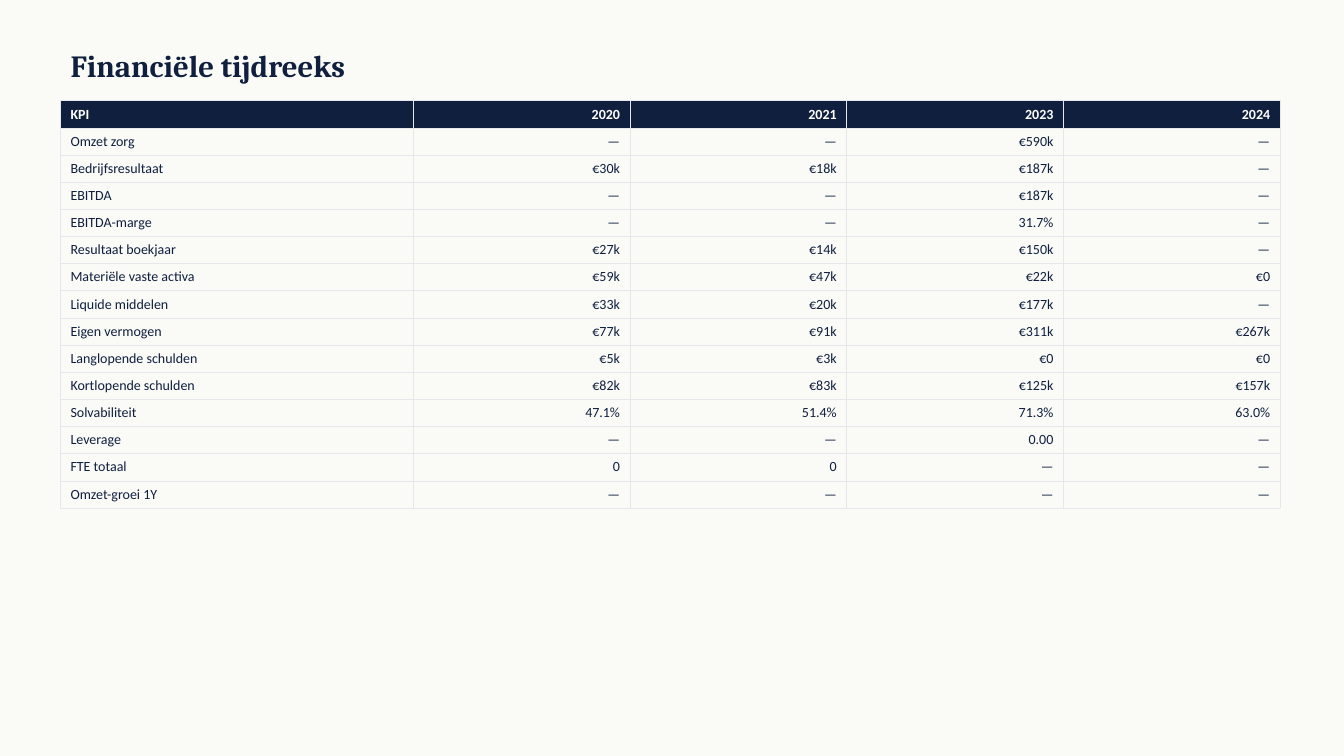
from dataclasses import dataclass

from lxml.etree import SubElement
from pptx import Presentation
from pptx.dml.color import RGBColor
from pptx.enum.text import MSO_ANCHOR, MSO_AUTO_SIZE, PP_ALIGN
from pptx.oxml.ns import qn
from pptx.util import Pt


@dataclass(frozen=True)
class Theme:
    background: str = "FAFAF7"
    navy: str = "0F1F3D"
    white: str = "FFFFFF"
    border: str = "E5E7EB"
    border_width: float = 0.5
    title_font: str = "Cambria"
    title_size: float = 22
    table_font: str = "Calibri"
    table_size: float = 10


THEME = Theme()
LEFT = 43.2
ROW_HEIGHT = 19.4
COLUMN_WIDTHS = [252] + [154.8] * 4

KPI_ROWS = [
    ("KPI", "2020", "2021", "2023", "2024"),
    ("Omzet zorg", "—", "—", "€590k", "—"),
    ("Bedrijfsresultaat", "€30k", "€18k", "€187k", "—"),
    ("EBITDA", "—", "—", "€187k", "—"),
    ("EBITDA-marge", "—", "—", "31.7%", "—"),
    ("Resultaat boekjaar", "€27k", "€14k", "€150k", "—"),
    ("Materiële vaste activa", "€59k", "€47k", "€22k", "€0"),
    ("Liquide middelen", "€33k", "€20k", "€177k", "—"),
    ("Eigen vermogen", "€77k", "€91k", "€311k", "€267k"),
    ("Langlopende schulden", "€5k", "€3k", "€0", "€0"),
    ("Kortlopende schulden", "€82k", "€83k", "€125k", "€157k"),
    ("Solvabiliteit", "47.1%", "51.4%", "71.3%", "63.0%"),
    ("Leverage", "—", "—", "0.00", "—"),
    ("FTE totaal", "0", "0", "—", "—"),
    ("Omzet-groei 1Y", "—", "—", "—", "—"),
]


def format_paragraph(para, font_name, size, color, bold, alignment):
    para.alignment = alignment
    para.font.name = font_name
    para.font.size = Pt(size)
    para.font.bold = bold
    para.font.color.rgb = RGBColor.from_string(color)


def set_title(slide, text):
    title = slide.shapes.title
    title.left, title.top = Pt(LEFT), Pt(28.8)
    title.width, title.height = Pt(864), Pt(36)
    frame = title.text_frame
    frame.text = text
    frame.auto_size = MSO_AUTO_SIZE.NONE
    frame.vertical_anchor = MSO_ANCHOR.MIDDLE
    format_paragraph(frame.paragraphs[0], THEME.title_font, THEME.title_size,
                     THEME.navy, True, PP_ALIGN.LEFT)


def add_borders(cell):
    properties = cell._tc.get_or_add_tcPr()
    for side in ("a:lnL", "a:lnR", "a:lnT", "a:lnB"):
        line = SubElement(properties, qn(side), w=str(Pt(THEME.border_width)))
        fill = SubElement(line, qn("a:solidFill"))
        SubElement(fill, qn("a:srgbClr"), val=THEME.border)


def fill_cell(cell, text, is_header, is_label):
    cell.text = text
    add_borders(cell)
    if is_header:
        cell.fill.solid()
        cell.fill.fore_color.rgb = RGBColor.from_string(THEME.navy)
    else:
        cell.fill.background()
    format_paragraph(cell.text_frame.paragraphs[0], THEME.table_font, THEME.table_size,
                     THEME.white if is_header else THEME.navy, is_header,
                     PP_ALIGN.LEFT if is_label else PP_ALIGN.RIGHT)


def add_kpi_table(slide, rows):
    table = slide.shapes.add_table(
        len(rows), len(COLUMN_WIDTHS), Pt(LEFT), Pt(72),
        Pt(sum(COLUMN_WIDTHS)), Pt(ROW_HEIGHT * len(rows))).table
    table.horz_banding = False
    for column, width in zip(table.columns, COLUMN_WIDTHS):
        column.width = Pt(width)
    for row_index, values in enumerate(rows):
        table.rows[row_index].height = Pt(ROW_HEIGHT)
        for column_index, value in enumerate(values):
            fill_cell(table.cell(row_index, column_index), value,
                      row_index == 0, column_index == 0)


def main():
    deck = Presentation()
    deck.slide_width, deck.slide_height = Pt(960), Pt(540)
    page = deck.slides.add_slide(deck.slide_layouts[5])
    page.background.fill.solid()
    page.background.fill.fore_color.rgb = RGBColor.from_string(THEME.background)
    set_title(page, "Financiële tijdreeks")
    add_kpi_table(page, KPI_ROWS)
    deck.save("out.pptx")


if __name__ == "__main__":
    main()
